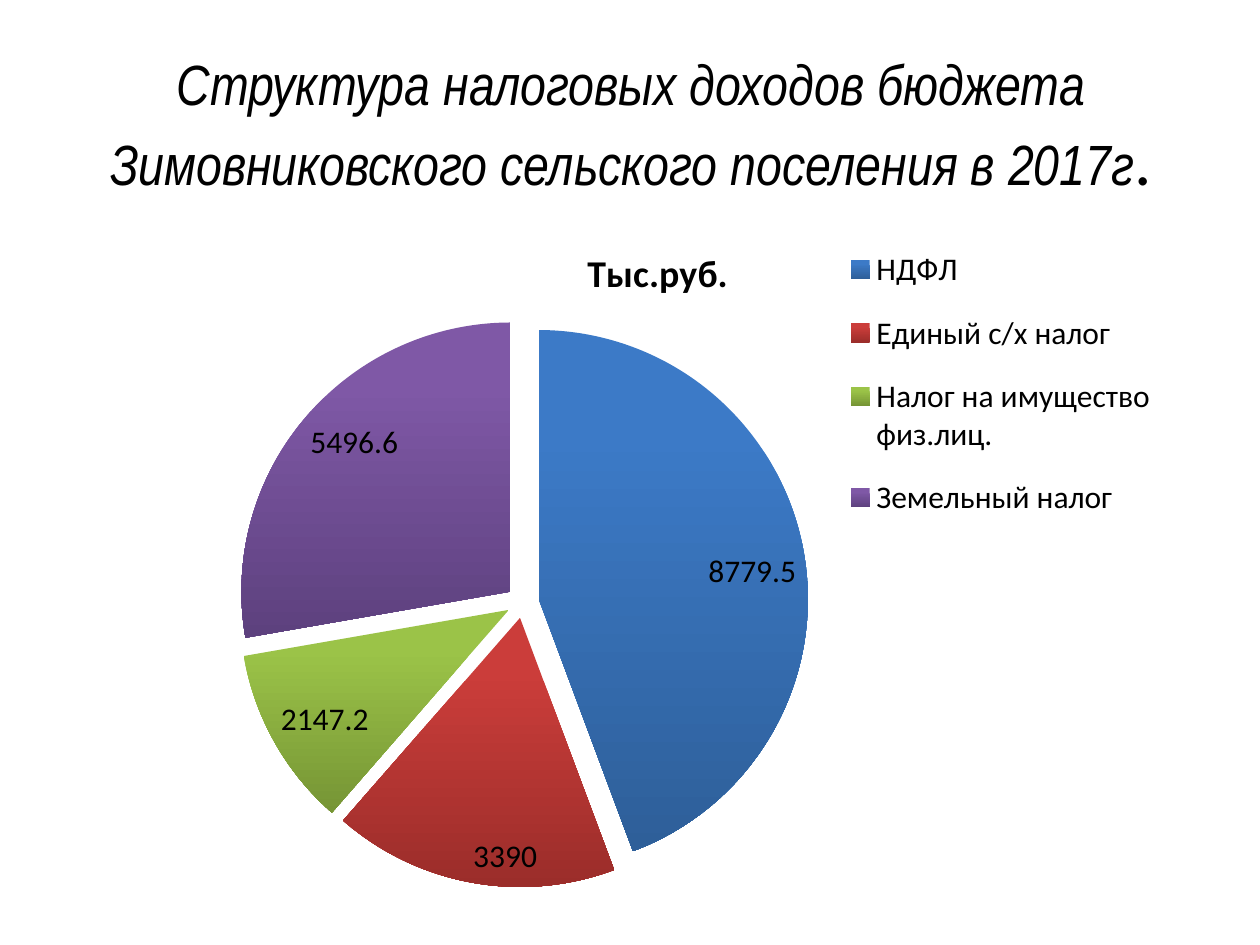
"""Build a slide with an exploded pie chart of budget tax revenue."""
from lxml import etree
from pptx import Presentation
from pptx import util as u
from pptx.chart.data import CategoryChartData
from pptx.dml.color import RGBColor
from pptx.enum import chart as c, text
from pptx.oxml import ns

TITLE = (
    ("Структура налоговых доходов бюджета Зимовниковского сельского поселения в 2017г",
     "Arial Narrow", 32.4, True),
    (".", "Calibri", 39.6, False),
)
CHART_TITLE = "Тыс.руб."
TAXES = (
    ("НДФЛ", 8779.5, "blue"),
    ("Единый с/х налог", 3390, "red"),
    ("Налог на имущество физ.лиц.", 2147.2, "green"),
    ("Земельный налог", 5496.6, "purple"),
)
COLORS = {
    "text": "000000",
    "blue": ("3C7AC7", "2E5F99"),
    "red": ("CB3D3A", "9B2D2A"),
    "green": ("9BC348", "769535"),
    "purple": ("7F58A6", "5D417E"),
}
EXPLOSION = 6
PLOT_LAYOUT = {"x": 0.14, "y": 0.16, "w": 0.5, "h": 0.81}
LEGEND_LAYOUT = {"x": 0.66, "y": 0.03, "w": 0.29, "h": 0.45}
TITLE_LAYOUT = {"x": 0.44, "y": 0.05}


def set_font(font, size, name="Calibri", bold=False, italic=False):
    font.name, font.size = name, u.Pt(size)
    font.bold, font.italic = bold, italic
    font.color.rgb = RGBColor.from_string(COLORS["text"])


def add_title(slide):
    box = slide.shapes.add_textbox(u.Inches(0.51), u.Inches(0.36), u.Inches(9), u.Inches(1.25))
    frame = box.text_frame
    frame.word_wrap = True
    frame.vertical_anchor = text.MSO_ANCHOR.MIDDLE
    paragraph = frame.paragraphs[0]
    paragraph.alignment = text.PP_ALIGN.CENTER
    for wording, name, size, italic in TITLE:
        run = paragraph.add_run()
        run.text = wording
        set_font(run.font, size, name, italic=italic)


def set_layout(element, values, inner=False):
    for old in element.findall(ns.qn("c:layout")):
        element.remove(old)
    layout = etree.Element(ns.qn("c:layout"))
    manual = etree.SubElement(layout, ns.qn("c:manualLayout"))
    settings = [("layoutTarget", "inner")] if inner else []
    settings += [(f"{key}Mode", "edge") for key in values if key in "xy"]
    settings += values.items()
    for tag, value in settings:
        etree.SubElement(manual, ns.qn(f"c:{tag}")).set("val", str(value))
    anchor = element.find(ns.qn("c:overlay"))
    if anchor is None:
        element.insert(0, layout)
    else:
        anchor.addprevious(layout)


def fill_slices(series):
    for index, (_, _, color) in enumerate(TAXES):
        fill = series.points[index].format.fill
        fill.gradient()
        fill.gradient_angle = 270
        for stop, shade, position in zip(fill.gradient_stops, COLORS[color], (0.2, 1)):
            stop.color.rgb = RGBColor.from_string(shade)
            stop.position = position
    explosion = etree.Element(ns.qn("c:explosion"), val=str(EXPLOSION))
    series._element.find(ns.qn("c:dPt")).addprevious(explosion)


def add_chart(slide):
    data = CategoryChartData()
    data.categories = [name for name, _, _ in TAXES]
    data.add_series(CHART_TITLE, [value for _, value, _ in TAXES])
    chart = slide.shapes.add_chart(
        c.XL_CHART_TYPE.PIE, u.Inches(0.59), u.Inches(1.62), u.Inches(9.13), u.Inches(5.59), data
    ).chart
    set_font(chart.font, 18)
    chart.has_title = True
    paragraph = chart.chart_title.text_frame.paragraphs[0]
    paragraph.text = CHART_TITLE
    set_font(paragraph.font, 21.6, bold=True)
    chart.chart_title.include_in_layout = False

    chart.has_legend = True
    chart.legend.position = c.XL_LEGEND_POSITION.RIGHT
    chart.legend.include_in_layout = False
    set_font(chart.legend.font, 18)

    plot = chart.plots[0]
    plot.vary_by_categories = True
    fill_slices(plot.series[0])
    plot.has_data_labels = True
    labels = plot.data_labels
    labels.show_value, labels.show_percentage = True, False
    labels.position = c.XL_LABEL_POSITION.INSIDE_END
    labels.number_format, labels.number_format_is_linked = "General", False
    set_font(labels.font, 18)

    set_layout(chart.chart_title._element, TITLE_LAYOUT)
    set_layout(chart.legend._element, LEGEND_LAYOUT)
    set_layout(chart._chartSpace.chart.plotArea, PLOT_LAYOUT, inner=True)


def main():
    presentation = Presentation()
    presentation.slide_width, presentation.slide_height = u.Inches(10), u.Inches(7.5)
    slide = presentation.slides.add_slide(presentation.slide_layouts[6])
    add_title(slide)
    add_chart(slide)
    presentation.save("out.pptx")


if __name__ == "__main__":
    main()
